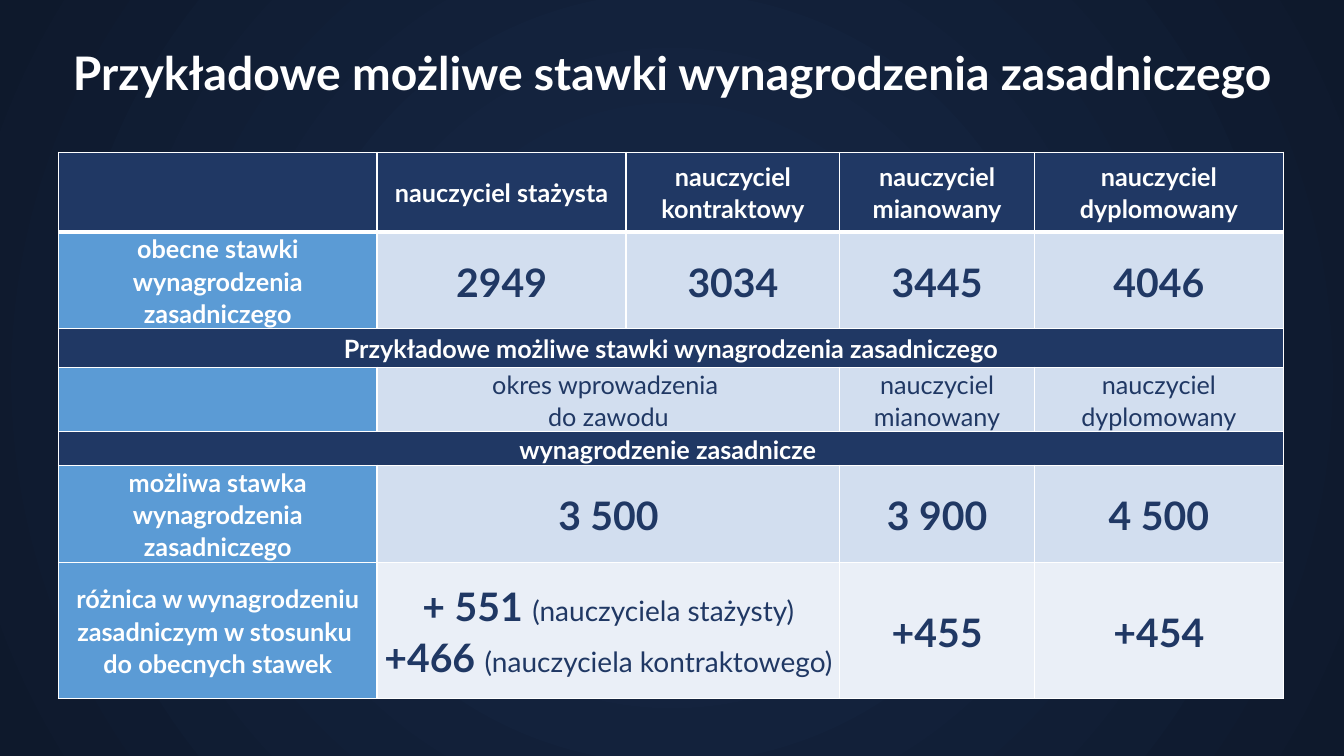
from lxml import etree
from pptx import Presentation
from pptx.dml.color import RGBColor
from pptx.enum.text import MSO_ANCHOR, PP_ALIGN
from pptx.oxml.ns import qn
from pptx.util import Inches, Pt

MIDDLE = MSO_ANCHOR.MIDDLE
CENTER = PP_ALIGN.CENTER

WHITE, NAVY, BLUE = "FFFFFF", "203864", "5B9BD5"
PALE, LIGHT = "D2DEEF", "EAEFF7"

# look: size, colour, bold
LOOKS = {
    "title": (33, WHITE, True),
    "head": (18, WHITE, True),
    "sum": (28, NAVY, True),
    "role": (18, NAVY, False),
    "note": (20, NAVY, False),
}

TITLE = "Przykładowe możliwe stawki wynagrodzenia zasadniczego"
COLS = [3.16, 2.47, 2.12, 1.93, 2.47]
GAINS = [
    [("+ 551 ", "sum"), ("(nauczyciela stażysty)", "note")],
    [("+466 ", "sum"), ("(nauczyciela kontraktowego)", "note")],
]

# height, first fill, other fill, look of other cells, cells
# A None cell joins the cell on its left.
ROWS = [
    (0.79, NAVY, NAVY, "head",
     ["", "nauczyciel stażysta", "nauczyciel kontraktowy",
      "nauczyciel mianowany", "nauczyciel dyplomowany"]),
    (0.79, BLUE, PALE, "sum",
     ["obecne stawki wynagrodzenia zasadniczego",
      "2949", "3034", "3445", "4046"]),
    (0.38, NAVY, NAVY, "head", [TITLE, None, None, None, None]),
    (0.54, BLUE, PALE, "role",
     ["", "okres wprowadzenia \ndo zawodu", None,
      "nauczyciel mianowany", "nauczyciel dyplomowany"]),
    (0.33, NAVY, NAVY, "head",
     ["wynagrodzenie zasadnicze ", None, None, None, None]),
    (0.79, BLUE, PALE, "sum",
     ["możliwa stawka wynagrodzenia zasadniczego",
      "3 500", None, "3 900", "4 500"]),
    (1.35, BLUE, LIGHT, "sum",
     ["różnica w wynagrodzeniu zasadniczym w stosunku \ndo obecnych stawek",
      GAINS, None, "+455", "+454"]),
]


def color(code):
    return RGBColor.from_string(code)


class Deck:
    font = "Lato"

    def __init__(self, width, height):
        self.file = Presentation()
        self.file.slide_width = Inches(width)
        self.file.slide_height = Inches(height)
        self.slide = self.file.slides.add_slide(self.file.slide_layouts[6])

    def glow(self, inner, outer):
        """Fill the background with a round gradient."""
        fill = self.slide.background.fill
        fill.gradient()
        for stop, code, place in zip(fill.gradient_stops, (inner, outer), (0, 1)):
            stop.color.rgb = color(code)
            stop.position = place
        grad = next(self.slide.element.iter(qn("a:gradFill")))
        grad.remove(grad.find(qn("a:lin")))
        shade = etree.SubElement(grad, qn("a:path"), {"path": "circle"})
        etree.SubElement(shade, qn("a:fillToRect"),
                         {side: "50000" for side in "ltrb"})

    def text(self, frame, paras, space=None):
        """Add paragraphs, each a list of (text, look) runs."""
        for i, runs in enumerate(paras):
            para = frame.add_paragraph() if i else frame.paragraphs[0]
            para.alignment = CENTER
            if space:
                para.line_spacing = space
            for words, look in runs:
                size, code, bold = LOOKS[look]
                for j, line in enumerate(words.split("\n")):
                    if j:
                        para.add_line_break()
                    run = para.add_run()
                    run.text = line
                    run.font.name = self.font
                    run.font.size = Pt(size)
                    run.font.bold = bold
                    run.font.color.rgb = color(code)

    def label(self, box, words, look):
        shape = self.slide.shapes.add_textbox(*map(Inches, box))
        frame = shape.text_frame
        frame.word_wrap = False
        frame.vertical_anchor = MIDDLE
        self.text(frame, [[(words, look)]])

    def edge(self, cell, widths):
        """Draw white borders; widths maps a side to points."""
        props = cell._tc.get_or_add_tcPr()
        for i, (side, width) in enumerate(widths.items()):
            line = etree.Element(qn("a:ln" + side), w=str(Pt(width)))
            fill = etree.SubElement(line, qn("a:solidFill"))
            etree.SubElement(fill, qn("a:srgbClr"), val=WHITE)
            props.insert(i, line)

    def cell(self, cell, data, fill, look):
        cell.fill.solid()
        cell.fill.fore_color.rgb = color(fill)
        cell.vertical_anchor = MIDDLE
        cell.margin_left = cell.margin_right = Inches(0.04)
        cell.margin_top = cell.margin_bottom = 0
        if data:
            paras = [[(data, look)]] if isinstance(data, str) else data
            self.text(cell.text_frame, paras, 1.07)

    def table(self, left, top, cols, rows):
        high = sum(row[0] for row in rows)
        box = map(Inches, (left, top, sum(cols), high))
        table = self.slide.shapes.add_table(len(rows), len(cols), *box).table
        table.first_row = table.horz_banding = False
        for i, width in enumerate(cols):
            table.columns[i].width = Inches(width)
        for r, (height, first, other, look, cells) in enumerate(rows):
            table.rows[r].height = Inches(height)
            start = 0
            for c, data in enumerate(cells):
                cell = table.cell(r, c)
                self.cell(cell, data, other if c else first,
                          look if c else "head")
                self.edge(cell, {"L": 1, "R": 1, "T": 3 if r == 1 else 1,
                                 "B": 3 if r == 0 else 1})
                if data is not None:
                    start = c
                elif c + 1 == len(cells) or cells[c + 1] is not None:
                    table.cell(r, start).merge(cell)


def main():
    deck = Deck(13.33, 7.5)
    deck.glow("172949", "0E192C")
    deck.table(0.58, 1.51, COLS, ROWS)
    deck.label((0.51, 0.38, 12.32, 0.66), TITLE, "title")
    deck.file.save("out.pptx")


if __name__ == "__main__":
    main()
